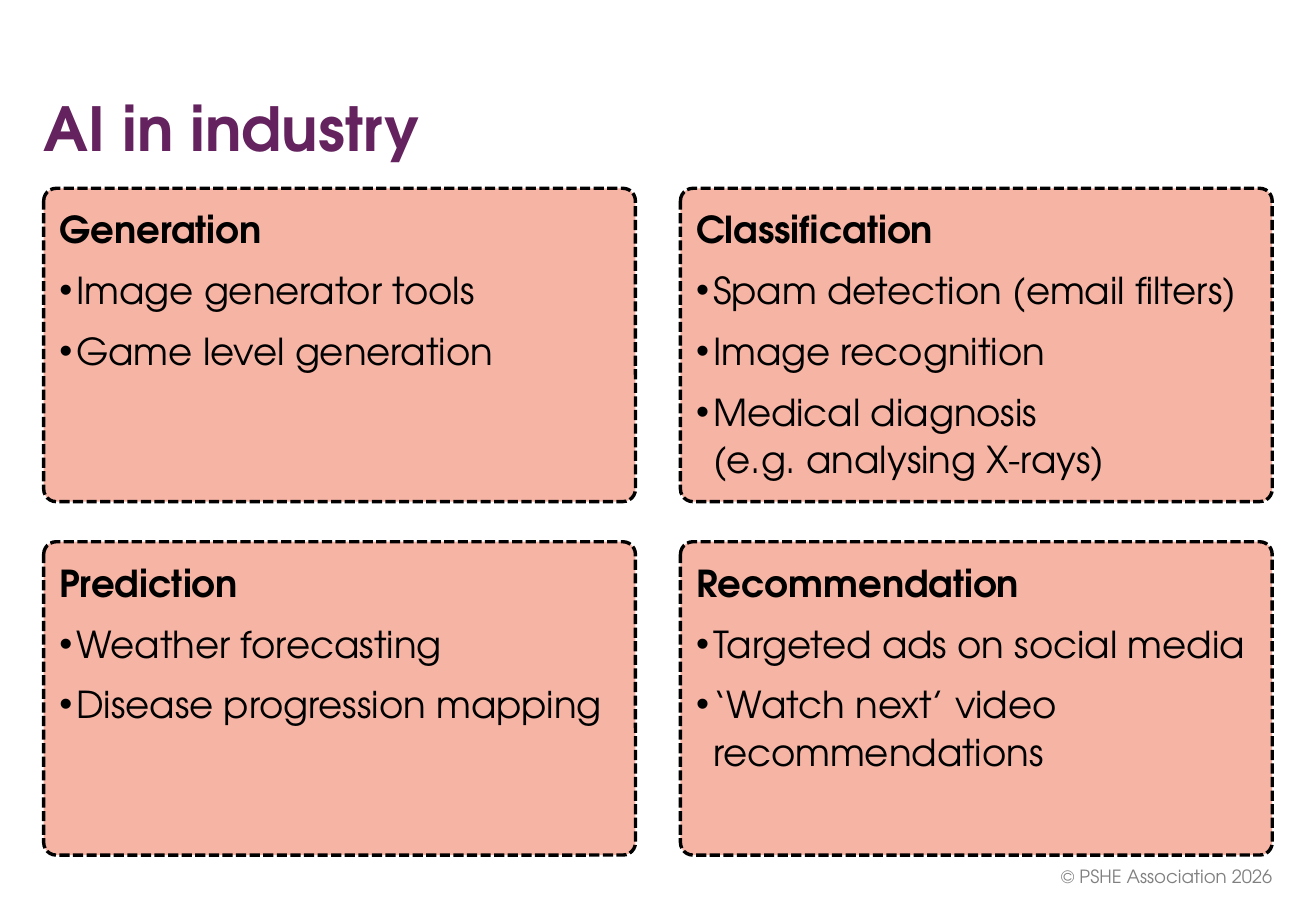
from pptx import Presentation
from pptx.dml.color import RGBColor
from pptx.enum.dml import MSO_LINE
from pptx.enum.shapes import MSO_SHAPE
from pptx.enum.text import MSO_ANCHOR, MSO_AUTO_SIZE, PP_ALIGN
from pptx.oxml.ns import qn
from pptx.util import Inches, Pt
from lxml.etree import SubElement

FONT = "TeX Gyre Adventor"
PURPLE = RGBColor(0x64, 0x23, 0x5E)
GREY = RGBColor(0x80, 0x80, 0x80)
BLACK = RGBColor(0x00, 0x00, 0x00)
SALMON = RGBColor(0xF6, 0xB4, 0xA5)

LEFT, TOP = 0.36, 1.55
CARD_WIDTH, CARD_HEIGHT = 4.87, 2.58
COLUMN_STEP, ROW_STEP = 5.24, 2.91
HANGING = Inches(0.14)

USES = [
    ("Generation", ["Image generator tools", "Game level generation"]),
    ("Classification", [
        "Spam detection (email filters)",
        "Image recognition",
        "Medical diagnosis\v(e.g. analysing X-rays)",
    ]),
    ("Prediction", ["Weather forecasting", "Disease progression mapping"]),
    ("Recommendation", [
        "Targeted ads on social media",
        "‘Watch next’ video recommendations",
    ]),
]


def place(part, left, top, width, height):
    part.left, part.top = Inches(left), Inches(top)
    part.width, part.height = Inches(width), Inches(height)


def style(paragraph, size, color, bold=False):
    for run in paragraph.runs:
        run.font.name = FONT
        run.font.size = Pt(size)
        run.font.bold = bold
        run.font.color.rgb = color


def add_heading(slide, left, top, width, height):
    heading = slide.shapes.title
    place(heading, left, top, width, height)
    frame = heading.text_frame
    frame.text = "AI in industry"
    frame.auto_size = MSO_AUTO_SIZE.NONE
    frame.vertical_anchor = MSO_ANCHOR.BOTTOM
    frame.margin_bottom = 0
    line = frame.paragraphs[0]
    line.alignment = PP_ALIGN.LEFT
    line.line_spacing = Pt(43)
    style(line, 36, PURPLE, True)


def set_hanging(paragraph, bulleted):
    properties = paragraph._p.get_or_add_pPr()
    properties.set("marL", str(HANGING))
    properties.set("indent", str(-HANGING))
    if bulleted:
        SubElement(properties, qn("a:buFont"), typeface="Arial")
        SubElement(properties, qn("a:buChar"), char="•")


def add_card(slide, category, examples, left, top, width, height):
    card = slide.shapes.add_shape(
        MSO_SHAPE.ROUNDED_RECTANGLE,
        Inches(left), Inches(top), Inches(width), Inches(height))
    card.adjustments[0] = 0.04
    card.shadow.inherit = False
    card.fill.solid()
    card.fill.fore_color.rgb = SALMON
    card.line.color.rgb = BLACK
    card.line.width = Pt(2)
    card.line.dash_style = MSO_LINE.SQUARE_DOT

    frame = card.text_frame
    frame.word_wrap = True
    frame.vertical_anchor = MSO_ANCHOR.TOP
    frame.margin_left = frame.margin_top = Inches(0.1)
    frame.margin_right, frame.margin_bottom = Inches(0.04), Inches(0.05)
    for index, entry in enumerate([category] + examples):
        is_example = index > 0
        paragraph = frame.add_paragraph() if is_example else frame.paragraphs[0]
        paragraph.text = entry
        set_hanging(paragraph, is_example)
        paragraph.alignment = PP_ALIGN.LEFT
        paragraph.line_spacing = Pt(28)
        paragraph.space_before = Pt(4 if is_example else 0)
        paragraph.space_after = Pt(4)
        style(paragraph, 22, BLACK, not is_example)


def add_copyright(slide, left, top, width, height):
    notice = slide.shapes.add_textbox(
        Inches(left), Inches(top), Inches(width), Inches(height))
    frame = notice.text_frame
    frame.text = "© PSHE Association 2026"
    frame.word_wrap = True
    frame.vertical_anchor = MSO_ANCHOR.MIDDLE
    frame.paragraphs[0].alignment = PP_ALIGN.RIGHT
    style(frame.paragraphs[0], 10.8, GREY)


def main():
    deck = Presentation()
    deck.slide_width, deck.slide_height = Inches(10.83), Inches(7.5)
    slide = deck.slides.add_slide(deck.slide_layouts[5])
    add_heading(slide, 0.26, 0.59, 8.48, 0.76)
    add_copyright(slide, 8.13, 7.01, 2.44, 0.4)
    for index, (category, examples) in enumerate(USES):
        row, column = divmod(index, 2)
        add_card(slide, category, examples,
                 LEFT + column * COLUMN_STEP, TOP + row * ROW_STEP,
                 CARD_WIDTH, CARD_HEIGHT)
    deck.save("out.pptx")


if __name__ == "__main__":
    main()
